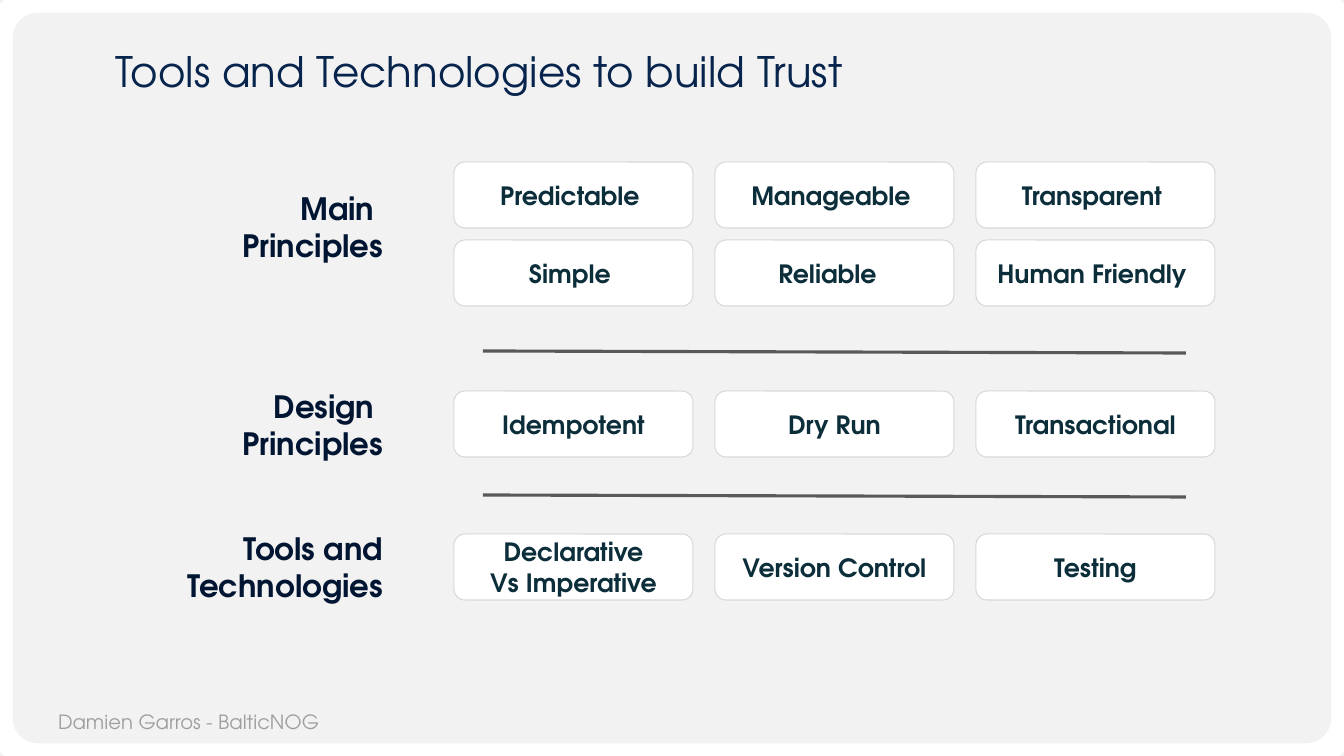
from dataclasses import dataclass
from pptx import Presentation
from pptx.dml.color import RGBColor
from pptx.enum.shapes import MSO_CONNECTOR, MSO_SHAPE
from pptx.enum.text import MSO_ANCHOR, MSO_AUTO_SIZE, PP_ALIGN
from pptx.oxml.ns import qn
from pptx.util import Pt
from lxml.etree import SubElement

# Content
TITLE = "Tools and Technologies to build Trust"
FOOTER = "Damien Garros - BalticNOG"
# label, label top, first box top, rows of boxes
GROUPS = [
    ("Main \nPrinciples", 180, 162, [
        ["Predictable ", "Manageable ", "Transparent "],
        ["Simple ", "Reliable  ", "Human Friendly "]]),
    ("Design \nPrinciples", 378, 391, [
        ["Idempotent", "Dry Run", "Transactional"]]),
    ("Tools and Technologies", 520, 534, [
        ["Declarative\nVs Imperative", "Version Control", "Testing"]]),
]
RULES = [351, 495]

# Layout in px
WIDE, HIGH = 1344, 756
LEFT, BOX_W, BOX_H = 454, 239, 66
STEP_X, STEP_Y = 261, 78
PAD = 10


@dataclass(frozen=True)
class Theme:
    font: str = "TeX Gyre Adventor"
    back: str = "F2F2F2"
    white: str = "FFFFFF"
    edge: str = "D8D8D8"
    rule: str = "595959"
    title: tuple = (30, "07244D", False)
    label: tuple = (22, "001532", True)
    box: tuple = (18, "0C2E3A", True)
    foot: tuple = (14, "9E9E9E", False)


THEME = Theme()


def px(n):
    return round(n * 914400 / 100.8)


def color(code):
    return RGBColor.from_string(code)


def write(shape, text, style, align, anchor=MSO_ANCHOR.TOP):
    frame = shape.text_frame
    frame.word_wrap = True
    frame.auto_size = MSO_AUTO_SIZE.NONE
    frame.vertical_anchor = anchor
    frame.margin_left = frame.margin_right = px(PAD)
    frame.margin_top = frame.margin_bottom = px(PAD)
    para = frame.paragraphs[0]
    para.text = text
    para.alignment = align
    size, ink, bold = style
    para.font.name = THEME.font
    para.font.size = Pt(size)
    para.font.bold = bold
    para.font.color.rgb = color(ink)
    return para


def add_round(slide, x, y, w, h, curve, edge, width):
    shape = slide.shapes.add_shape(
        MSO_SHAPE.ROUNDED_RECTANGLE, px(x), px(y), px(w), px(h))
    shape.adjustments[0] = curve
    shape.shadow.inherit = False
    shape.line.color.rgb = color(edge)
    shape.line.width = Pt(width)
    return shape


def add_text(slide, x, y, w, h, text, style, align):
    box = slide.shapes.add_textbox(px(x), px(y), px(w), px(h))
    write(box, text, style, align)


def add_box(slide, x, y, text):
    box = add_round(slide, x, y, BOX_W, BOX_H, 0.167, THEME.edge, 0.75)
    box.fill.solid()
    box.fill.fore_color.rgb = color(THEME.white)
    write(box, text, THEME.box, PP_ALIGN.CENTER, MSO_ANCHOR.MIDDLE)


def add_rule(slide, y):
    line = slide.shapes.add_connector(
        MSO_CONNECTOR.STRAIGHT, px(483), px(y), px(1186), px(y + 2))
    line.line.color.rgb = color(THEME.rule)
    line.line.width = Pt(2.25)
    SubElement(line._element.spPr, qn("a:effectLst"))


def main():
    deck = Presentation()
    deck.slide_width, deck.slide_height = px(WIDE), px(HIGH)
    slide = deck.slides.add_slide(deck.slide_layouts[5])

    # Background and frame
    slide.background.fill.solid()
    slide.background.fill.fore_color.rgb = color(THEME.back)
    frame = add_round(slide, 0, 0, WIDE, HIGH, 0.05, THEME.white, 18)
    frame.fill.background()

    # Title and footer
    title = slide.shapes.title
    title.left, title.top = px(105), px(45)
    title.width, title.height = px(1186), px(66)
    write(title, TITLE, THEME.title, PP_ALIGN.LEFT).line_spacing = 0.8
    add_text(slide, 48, 700, 652, 44, FOOTER, THEME.foot, PP_ALIGN.LEFT)

    # Labels with their grids of boxes
    for label, label_y, top, rows in GROUPS:
        add_text(slide, 62, label_y, 331, 95, label, THEME.label, PP_ALIGN.RIGHT)
        for r, row in enumerate(rows):
            for c, text in enumerate(row):
                add_box(slide, LEFT + c * STEP_X, top + r * STEP_Y, text)

    # Dividing lines
    for y in RULES:
        add_rule(slide, y)

    deck.save("out.pptx")


if __name__ == "__main__":
    main()
